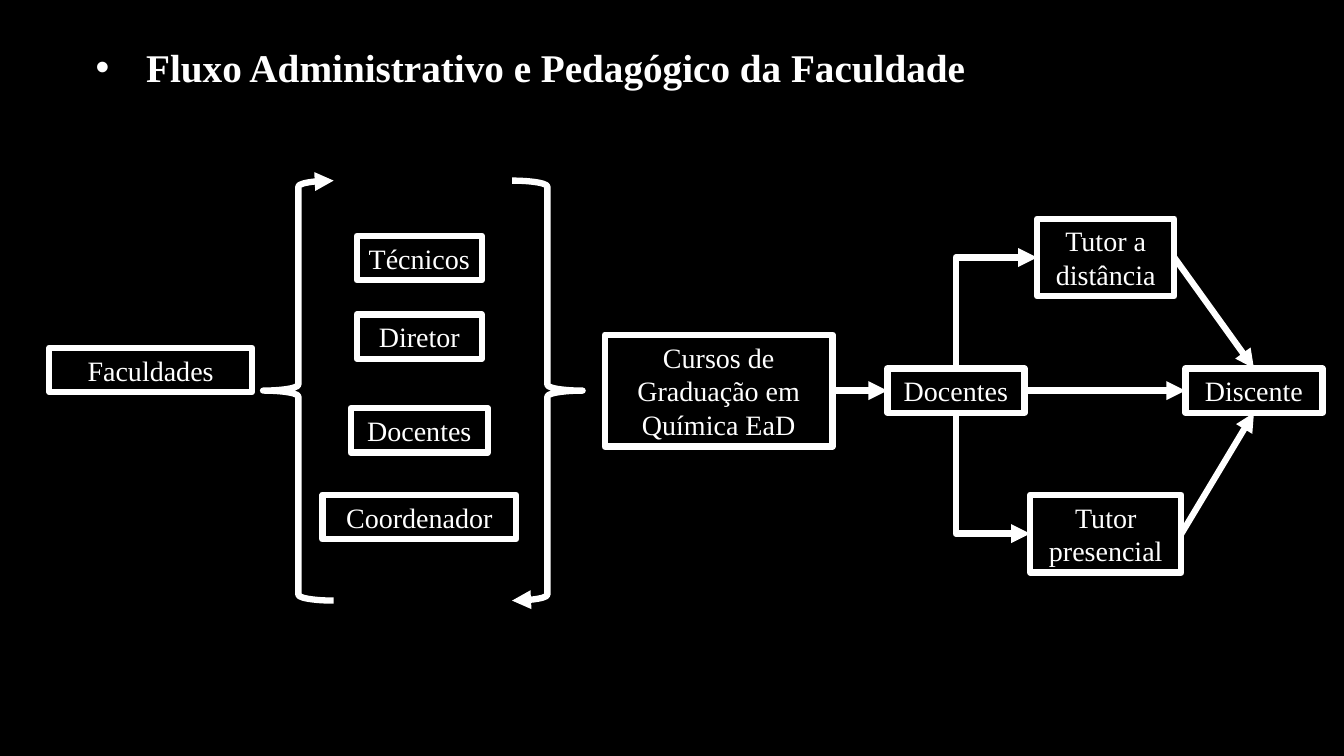
from dataclasses import dataclass
from enum import IntEnum

import pptx
import pptx.dml.color
import pptx.enum.shapes
import pptx.enum.text
import pptx.oxml
import pptx.oxml.ns
import pptx.util
from lxml import etree

COLUMNS, ROWS = 160, 90
SLIDE_WIDTH, SLIDE_HEIGHT = pptx.util.Inches(13.33), pptx.util.Inches(7.5)

MIDDLE_ROW = 46.5
TEAM_COLUMN = 49.92
TUTOR_COLUMN = 131.64
LINES_TO_ROWS = {1: 5.28, 2: 9.24, 3: 13.32}


@dataclass(frozen=True)
class Theme:
    background: pptx.dml.color.RGBColor = pptx.dml.color.RGBColor(0, 0, 0)
    ink: pptx.dml.color.RGBColor = pptx.dml.color.RGBColor(255, 255, 255)
    font: str = "Times New Roman"
    title_size: pptx.util.Pt = pptx.util.Pt(28)
    box_size: pptx.util.Pt = pptx.util.Pt(20)
    stroke: pptx.util.Pt = pptx.util.Pt(4.5)


THEME = Theme()


class Side(IntEnum):
    TOP = 0
    LEFT = 1
    BOTTOM = 2
    RIGHT = 3


@dataclass(frozen=True)
class Role:
    """A labelled box, placed by its centre on the grid."""
    label: str
    column: float
    row: float
    width: float
    lines: int = 1


@dataclass(frozen=True)
class Brace:
    column: float
    rotation: int


@dataclass(frozen=True)
class Flow:
    source: str
    source_side: Side
    target: str
    target_side: Side


ROLES = {
    "faculties": Role("Faculdades", 17.94, 44.04, 24.12),
    "technicians": Role("Técnicos", TEAM_COLUMN, 30.72, 14.88),
    "director": Role("Diretor", TEAM_COLUMN, 40.08, 14.88),
    "team teachers": Role("Docentes", TEAM_COLUMN, 51.24, 16.32),
    "coordinator": Role("Coordenador", TEAM_COLUMN, 61.56, 23.04),
    "courses": Role("Cursos de Graduação em Química EaD", 85.56, MIDDLE_ROW, 27.12, 3),
    "teachers": Role("Docentes", 113.8, MIDDLE_ROW, 16.32),
    "student": Role("Discente", 149.28, MIDDLE_ROW, 16.32),
    "distance tutor": Role("Tutor a distância", TUTOR_COLUMN, 30.66, 16.32, 2),
    "local tutor": Role("Tutor presencial", TUTOR_COLUMN, 63.54, 18, 2),
}
BRACES = [Brace(35.52, 0), Brace(65.16, 180)]
STRAIGHT_FLOWS = [
    Flow("courses", Side.RIGHT, "teachers", Side.LEFT),
    Flow("teachers", Side.RIGHT, "student", Side.LEFT),
    Flow("distance tutor", Side.RIGHT, "student", Side.TOP),
    Flow("local tutor", Side.RIGHT, "student", Side.BOTTOM),
]
BENT_FLOWS = [
    Flow("teachers", Side.TOP, "distance tutor", Side.LEFT),
    Flow("teachers", Side.BOTTOM, "local tutor", Side.LEFT),
]


def across(columns: float) -> int:
    return round(SLIDE_WIDTH * columns / COLUMNS)


def down(rows: float) -> int:
    return round(SLIDE_HEIGHT * rows / ROWS)


def format_text(paragraph, size: int, bold: bool = False) -> None:
    for run in paragraph.runs:
        run.font.name = THEME.font
        run.font.size = size
        run.font.bold = bold
        run.font.color.rgb = THEME.ink


def draw_outline(shape, arrow_end: str = "") -> None:
    """Stroke the shape; arrow_end is headEnd, tailEnd or empty."""
    shape.line.color.rgb = THEME.ink
    shape.line.width = THEME.stroke
    if arrow_end:
        stroke = shape._element.spPr.find(pptx.oxml.ns.qn("a:ln"))
        etree.SubElement(stroke, pptx.oxml.ns.qn(f"a:{arrow_end}"), type="triangle")


def add_centred(slide, preset, column: float, row: float, width: float, height: float):
    """Add an unfilled preset shape around a grid point."""
    shape = slide.shapes.add_shape(
        preset, across(column - width / 2), down(row - height / 2),
        across(width), down(height))
    shape.shadow.inherit = False
    shape.fill.background()
    return shape


def add_role(slide, role: Role):
    box = add_centred(slide, pptx.enum.shapes.MSO_SHAPE.RECTANGLE,
                      role.column, role.row, role.width, LINES_TO_ROWS[role.lines])
    draw_outline(box)
    frame = box.text_frame
    frame.word_wrap = True
    frame.text = role.label
    frame.paragraphs[0].alignment = pptx.enum.text.PP_ALIGN.CENTER
    format_text(frame.paragraphs[0], THEME.box_size)
    return box


def add_brace(slide, brace: Brace) -> None:
    shape = add_centred(slide, pptx.enum.shapes.MSO_SHAPE.LEFT_BRACE,
                        brace.column, MIDDLE_ROW, 8.4, 50)
    shape.rotation = brace.rotation
    draw_outline(shape, "tailEnd")


def join(slide, kind, begin, begin_side: Side, end, end_side: Side, arrow_end: str):
    connector = slide.shapes.add_connector(kind, 0, 0, 0, 0)
    connector.begin_connect(begin, begin_side)
    connector.end_connect(end, end_side)
    draw_outline(connector, arrow_end)
    properties = connector._element.spPr
    etree.SubElement(properties, pptx.oxml.ns.qn("a:effectLst"))
    return connector


def add_straight_flow(slide, boxes: dict, flow: Flow) -> None:
    join(slide, pptx.enum.shapes.MSO_CONNECTOR.STRAIGHT, boxes[flow.source],
         flow.source_side, boxes[flow.target], flow.target_side, "tailEnd")


def add_bent_flow(slide, boxes: dict, flow: Flow) -> None:
    """Run from target to source, since a one-corner bend leaves sideways."""
    connector = join(slide, pptx.enum.shapes.MSO_CONNECTOR.ELBOW, boxes[flow.target],
                     flow.target_side, boxes[flow.source], flow.source_side, "headEnd")
    geometry = connector._element.spPr.find(pptx.oxml.ns.qn("a:prstGeom"))
    geometry.set("prst", "bentConnector2")


def write_title(slide, text: str) -> None:
    title = slide.shapes.title
    title.left, title.top = across(10.2), down(4.56)
    title.width, title.height = across(129.6), down(6.84)
    frame = title.text_frame
    frame.text = text
    frame.word_wrap = True
    frame.auto_size = pptx.enum.text.MSO_AUTO_SIZE.NONE
    frame.vertical_anchor = pptx.enum.text.MSO_ANCHOR.TOP
    heading = frame.paragraphs[0]
    heading.alignment = pptx.enum.text.PP_ALIGN.LEFT
    properties = heading._p.get_or_add_pPr()
    properties.set("marL", str(across(6)))
    properties.set("indent", str(-across(6)))
    bullet_colour = etree.SubElement(properties, pptx.oxml.ns.qn("a:buClr"))
    etree.SubElement(bullet_colour, pptx.oxml.ns.qn("a:srgbClr"), val=str(THEME.ink))
    etree.SubElement(properties, pptx.oxml.ns.qn("a:buFont"), typeface="Arial")
    etree.SubElement(properties, pptx.oxml.ns.qn("a:buChar"), char="•")
    format_text(heading, THEME.title_size, bold=True)


def main() -> None:
    deck = pptx.Presentation()
    deck.slide_width, deck.slide_height = SLIDE_WIDTH, SLIDE_HEIGHT
    slide = deck.slides.add_slide(deck.slide_layouts.get_by_name("Title Only"))
    slide.background.fill.solid()
    slide.background.fill.fore_color.rgb = THEME.background
    write_title(slide, "Fluxo Administrativo e Pedagógico da Faculdade")
    boxes = {key: add_role(slide, role) for key, role in ROLES.items()}
    for brace in BRACES:
        add_brace(slide, brace)
    for flow in BENT_FLOWS:
        add_bent_flow(slide, boxes, flow)
    for flow in STRAIGHT_FLOWS:
        add_straight_flow(slide, boxes, flow)
    deck.save("out.pptx")


if __name__ == "__main__":
    main()
